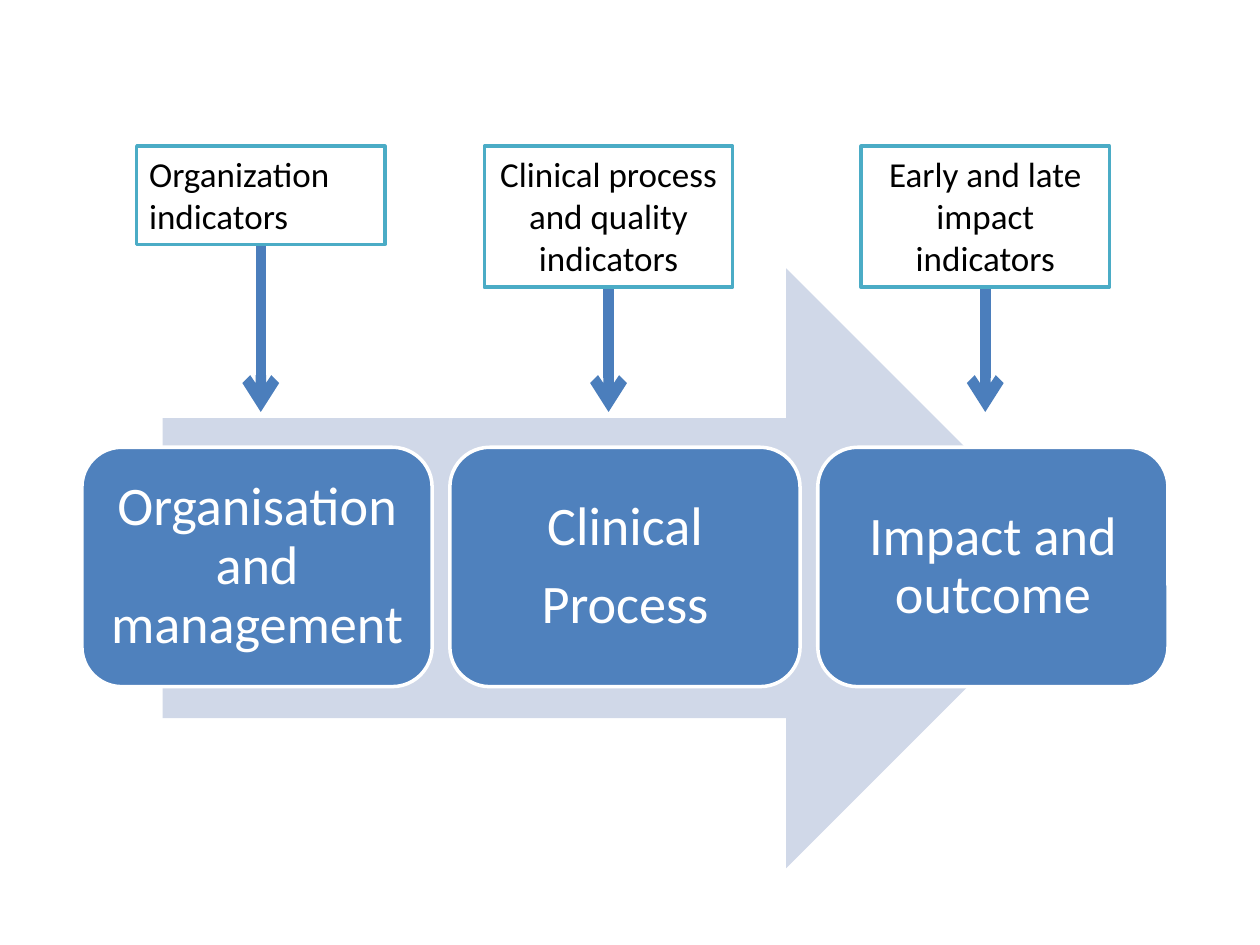
import pptx
import pptx.util
import pptx.dml.color
import pptx.enum.shapes
import pptx.enum.text
import pptx.oxml
import pptx.oxml.ns

Inches = pptx.util.Inches
Pt = pptx.util.Pt
RGBColor = pptx.dml.color.RGBColor
Shape = pptx.enum.shapes.MSO_SHAPE
Align = pptx.enum.text.PP_ALIGN
Anchor = pptx.enum.text.MSO_ANCHOR

WHITE = RGBColor(0xFF, 0xFF, 0xFF)
BLACK = RGBColor(0, 0, 0)
BLUE = RGBColor(0x4F, 0x81, 0xBD)
PALE = RGBColor(0xD0, 0xD8, 0xE8)
TEAL = RGBColor(0x4B, 0xAC, 0xC6)
STEEL = RGBColor(0x4B, 0x7E, 0xBC)

STAGES = [["Organisation and management"], ["Clinical", "Process"],
          ["Impact and outcome"]]
LABELS = [
    ("Organization indicators", 2.07, 0.78, Align.LEFT),
    ("Clinical process and quality indicators", 4.83, 1.12, Align.CENTER),
    ("Early and late impact indicators", 7.82, 1.12, Align.CENTER),
]


class Board:
    font = "Calibri"

    def __init__(self, slide):
        self.slide = slide

    def shape(self, kind, left, top, width, height, fill, line=None):
        item = self.slide.shapes.add_shape(
            kind, Inches(left), Inches(top), Inches(width), Inches(height))
        item.shadow.inherit = False
        item.fill.solid()
        item.fill.fore_color.rgb = fill
        if line is None:
            item.line.fill.background()
        else:
            item.line.color.rgb = line
            item.line.width = Pt(2)
        return item

    def text(self, item, lines, size, color, align):
        frame = item.text_frame
        frame.word_wrap = True
        for i, line in enumerate(lines):
            para = frame.paragraphs[0] if i == 0 else frame.add_paragraph()
            para.alignment = align
            run = para.add_run()
            run.text = line
            run.font.name = self.font
            run.font.size = Pt(size)
            run.font.color.rgb = color
        return frame

    def stage(self, left, lines):
        box = self.shape(Shape.ROUNDED_RECTANGLE, left, 3.55, 2.78, 1.9,
                         BLUE, WHITE)
        frame = self.text(box, lines, 31, WHITE, Align.CENTER)
        frame.vertical_anchor = Anchor.MIDDLE
        frame.margin_left = frame.margin_right = Inches(0.13)
        frame.margin_top = frame.margin_bottom = Inches(0.13)
        for para in frame.paragraphs:
            para.line_spacing = 0.9
            para.space_after = Pt(11)

    def label(self, mid, height, words, align):
        width = 1.97
        box = self.shape(Shape.RECTANGLE, mid - width / 2, 1.16, width, height,
                         WHITE, TEAL)
        frame = self.text(box, [words], 20, BLACK, align)
        frame.vertical_anchor = Anchor.TOP

    def arrow(self, x, top, end):
        line = self.slide.shapes.add_connector(
            pptx.enum.shapes.MSO_CONNECTOR.STRAIGHT,
            Inches(x), Inches(top), Inches(x), Inches(end))
        line.line.color.rgb = STEEL
        line.line.width = Pt(6)
        make = pptx.oxml.parse_xml
        space = pptx.oxml.ns.nsdecls("a")
        props = line._element.spPr
        props.get_or_add_ln().append(
            make(f'<a:tailEnd {space} type="arrow"/>'))
        props.append(make(f"<a:effectLst {space}/>"))


def main():
    deck = pptx.Presentation()
    deck.slide_width = Inches(10)
    deck.slide_height = Inches(7.5)
    board = Board(deck.slides.add_slide(deck.slide_layouts[6]))

    board.shape(Shape.RIGHT_ARROW, 1.29, 2.13, 7.33, 4.76, PALE)
    pitch = 2.92
    for i, lines in enumerate(STAGES):
        board.stage(0.65 + i * pitch, lines)
    for words, mid, height, align in LABELS:
        board.arrow(mid, 1.72, 3.27)
        board.label(mid, height, words, align)

    deck.save("out.pptx")


if __name__ == "__main__":
    main()
